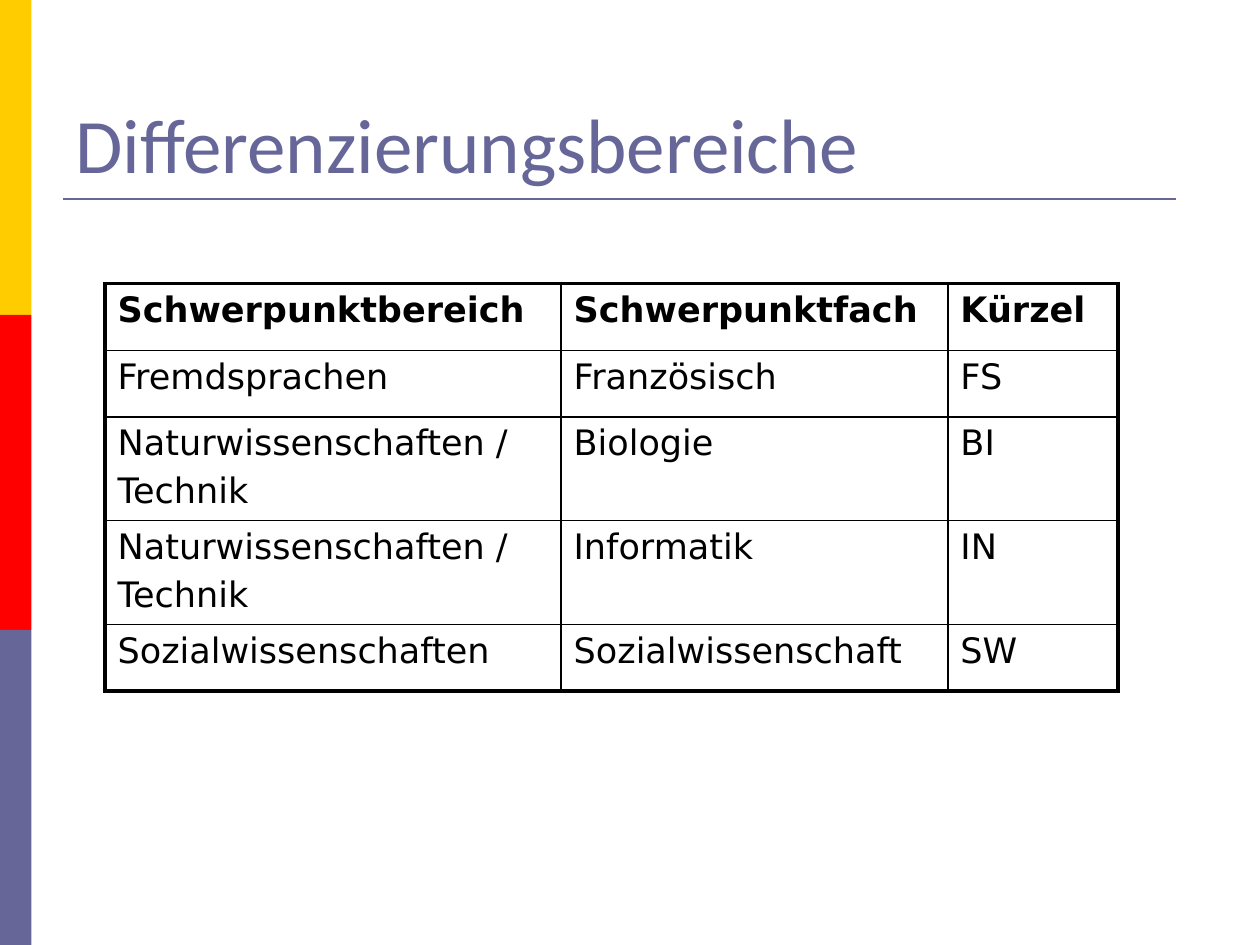
from lxml.etree import SubElement
from pptx import Presentation
from pptx.dml.color import RGBColor
from pptx.enum.shapes import MSO_CONNECTOR, MSO_SHAPE
from pptx.enum.text import MSO_ANCHOR
from pptx.oxml.ns import qn
from pptx.util import Inches, Pt

YELLOW = RGBColor(0xFF, 0xCC, 0x00)
RED = RGBColor(0xFF, 0x00, 0x00)
VIOLET = RGBColor(0x66, 0x66, 0x99)
BLACK = RGBColor(0x00, 0x00, 0x00)

WIDTH, HEIGHT = Inches(10), Inches(7.5)
THIN, THICK = Pt(1), Pt(2.25)

COLUMN_WIDTHS = [3.62, 3.07, 1.35]
ROW_HEIGHTS = [0.53, 0.53, 0.8, 0.8, 0.53]
SUBJECTS = [
    ("Schwerpunktbereich", "Schwerpunktfach", "Kürzel"),
    ("Fremdsprachen", "Französisch", "FS"),
    ("Naturwissenschaften /\nTechnik", "Biologie", "BI"),
    ("Naturwissenschaften /\nTechnik", "Informatik", "IN"),
    ("Sozialwissenschaften", "Sozialwissenschaft", "SW"),
]


def add_run(paragraph, text, font_name, size, color, bold=False):
    run = paragraph.add_run()
    run.text = text
    run.font.name = font_name
    run.font.size = Pt(size)
    run.font.bold = bold
    run.font.color.rgb = color


def add_side_bands(slide, colors):
    """Stack equal colour bands down the left edge."""
    band_height = HEIGHT // len(colors)
    for index, color in enumerate(colors):
        band = slide.shapes.add_shape(
            MSO_SHAPE.RECTANGLE, 0, index * band_height, WIDTH // 40, band_height)
        band.shadow.inherit = False
        band.fill.solid()
        band.fill.fore_color.rgb = color
        band.line.fill.background()


def add_title(slide, text):
    title = slide.shapes.add_textbox(
        WIDTH // 20, HEIGHT // 25, int(WIDTH * 0.9), HEIGHT // 6)
    frame = title.text_frame
    frame.word_wrap = True
    frame.vertical_anchor = MSO_ANCHOR.BOTTOM
    add_run(frame.paragraphs[0], text, "Calibri", 44, VIOLET)


def add_title_rule(slide):
    y = Inches(1.58)
    rule = slide.shapes.add_connector(
        MSO_CONNECTOR.STRAIGHT, WIDTH // 20, y, Inches(9.33), y)
    rule.line.color.rgb = VIOLET
    rule.line.width = Pt(1.5)
    SubElement(rule._element.spPr, qn("a:effectLst"))


def set_borders(cell, widths):
    """Draw the left, right, top and bottom borders in the given widths."""
    properties = cell._tc.get_or_add_tcPr()
    for position, (side, width) in enumerate(zip("LRTB", widths)):
        border = SubElement(properties, qn(f"a:ln{side}"), w=str(width))
        fill = SubElement(border, qn("a:solidFill"))
        SubElement(fill, qn("a:srgbClr"), val=str(BLACK))
        properties.insert(position, border)


def fill_cell(cell, text, bold):
    cell.fill.background()
    frame = cell.text_frame
    for index, line in enumerate(text.split("\n")):
        paragraph = frame.add_paragraph() if index else frame.paragraphs[0]
        paragraph.space_before = Pt(4)
        add_run(paragraph, line, "DejaVu Sans", 20, BLACK, bold)


def add_subject_table(slide):
    last_row, last_column = len(ROW_HEIGHTS) - 1, len(COLUMN_WIDTHS) - 1
    table = slide.shapes.add_table(
        len(ROW_HEIGHTS), len(COLUMN_WIDTHS), WIDTH // 12, int(HEIGHT * 0.3),
        Inches(sum(COLUMN_WIDTHS)), Inches(sum(ROW_HEIGHTS))).table
    table.first_row = False
    table.horz_banding = False
    for column, width in zip(table.columns, COLUMN_WIDTHS):
        column.width = Inches(width)
    for r, (row, height) in enumerate(zip(table.rows, ROW_HEIGHTS)):
        row.height = Inches(height)
        for c, cell in enumerate(row.cells):
            fill_cell(cell, SUBJECTS[r][c], bold=r == 0)
            outer_edges = (c == 0, c == last_column, r == 0, r == last_row)
            set_borders(cell, [THICK if outer else THIN for outer in outer_edges])


def main():
    presentation = Presentation()
    presentation.slide_width, presentation.slide_height = WIDTH, HEIGHT
    slide = presentation.slides.add_slide(presentation.slide_layouts[6])
    add_side_bands(slide, [YELLOW, RED, VIOLET])
    add_title_rule(slide)
    add_title(slide, "Differenzierungsbereiche")
    add_subject_table(slide)
    presentation.save("out.pptx")


if __name__ == "__main__":
    main()
